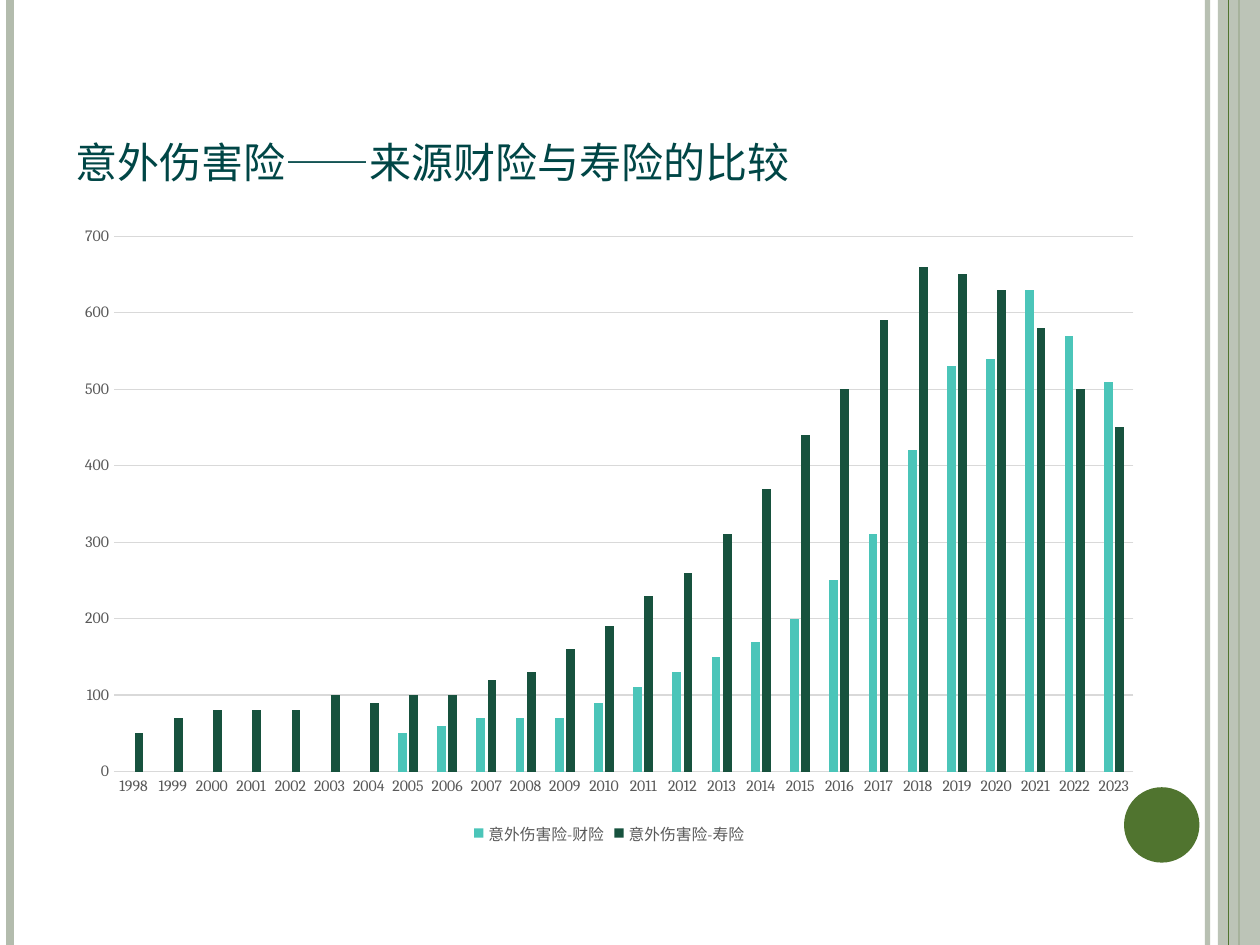
import pptx
import pptx.chart.data
import pptx.dml.color
import pptx.enum.chart
import pptx.enum.shapes
import pptx.enum.text
import pptx.oxml.ns
import pptx.util
from lxml import etree
from pptx.util import Cm, Pt

FONT = "Cambria"
SAGE, MOSS, GRID, LABEL = "B3BCAD", "50742F", "D9D9D9", "595959"
PAGE_WIDTH, PAGE_HEIGHT = Cm(25.4), Cm(19.05)

YEARS = [str(year) for year in range(1998, 2024)]
PROPERTY_INSURERS = [None] * 7 + [50, 60, 70, 70, 70, 90, 110, 130, 150, 170,
                                  200, 250, 310, 420, 530, 540, 630, 570, 510]
LIFE_INSURERS = [50, 70, 80, 80, 80, 100, 90, 100, 100, 120, 130, 160, 190,
                 230, 260, 310, 370, 440, 500, 590, 660, 650, 630, 580, 500, 450]
SERIES = [("意外伤害险-财险", PROPERTY_INSURERS, "4BC5B9"),
          ("意外伤害险-寿险", LIFE_INSURERS, "17523E")]


def color(hex_code):
    return pptx.dml.color.RGBColor.from_string(hex_code)


def add_child(parent, tag, **attributes):
    return etree.SubElement(parent, pptx.oxml.ns.qn(tag), attributes)


def set_opacity(properties, percent):
    for solid in properties.iter(pptx.oxml.ns.qn("a:srgbClr")):
        add_child(solid, "a:alpha", val=str(percent * 1000))


def set_font(font, size, hex_code):
    font.name = FONT
    font.size = Pt(size)
    font.color.rgb = color(hex_code)


def add_text(slide, text, left, top, width, height, size, hex_code,
             anchor=pptx.enum.text.MSO_ANCHOR.BOTTOM, small_caps=False):
    frame = slide.shapes.add_textbox(left, top, width, height).text_frame
    frame.word_wrap = True
    frame.vertical_anchor = anchor
    run = frame.paragraphs[0].add_run()
    run.text = text
    set_font(run.font, size, hex_code)
    if small_caps:
        run.font._element.set("cap", "small")


def add_stripe(slide, x, top, height, hex_code, weight, opacity=100):
    stripe = slide.shapes.add_connector(
        pptx.enum.shapes.MSO_CONNECTOR.STRAIGHT, x, top, x, top + height)
    stripe.line.color.rgb = color(hex_code)
    stripe.line.width = Pt(weight)
    properties = stripe._element.spPr
    if opacity < 100:
        set_opacity(properties, opacity)
    add_child(properties, "a:effectLst")


def add_filled(slide, kind, left, top, width, height, hex_code, opacity=100):
    shape = slide.shapes.add_shape(kind, left, top, width, height)
    shape.shadow.inherit = False
    shape.fill.solid()
    shape.fill.fore_color.rgb = color(hex_code)
    if opacity < 100:
        set_opacity(shape._element.spPr, opacity)
    shape.line.fill.background()


def add_frame(slide, left, top, width, height):
    """Stripes along both edges of the page, with the round badge."""
    right = left + width
    shapes = pptx.enum.shapes.MSO_SHAPE
    add_stripe(slide, right - Cm(1.06), top, height, SAGE, 3, opacity=93)
    add_stripe(slide, left + Cm(0.21), top, height, SAGE, 4.5)
    add_stripe(slide, right - Cm(0.42), top, height, MOSS, 1.5)
    add_filled(slide, shapes.RECTANGLE, right - Cm(0.85), top,
               Cm(0.85), height, SAGE, opacity=87)
    add_stripe(slide, right - Cm(0.64), top, height, MOSS, 0.75)
    add_filled(slide, shapes.OVAL, right - Cm(2.74), top + height - Cm(3.18),
               Cm(1.52), Cm(1.52), MOSS)


def style_axis(axis):
    axis.major_tick_mark = pptx.enum.chart.XL_TICK_MARK.NONE
    axis.minor_tick_mark = pptx.enum.chart.XL_TICK_MARK.NONE
    set_font(axis.tick_labels.font, 9, LABEL)


def style_line(line):
    line.color.rgb = color(GRID)
    line.width = Pt(0.75)


def add_comparison_chart(slide, left, top, width, height):
    chart_data = pptx.chart.data.CategoryChartData()
    chart_data.categories = YEARS
    for name, values, _ in SERIES:
        chart_data.add_series(name, values)
    chart = slide.shapes.add_chart(
        pptx.enum.chart.XL_CHART_TYPE.COLUMN_CLUSTERED,
        left, top, width, height, chart_data).chart
    chart.has_title = False
    set_font(chart.font, 10, "000000")

    # Columns
    plot = chart.plots[0]
    plot.vary_by_categories = False
    plot.gap_width = 219
    plot.overlap = -27
    for columns, (_, _, hex_code) in zip(plot.series, SERIES):
        columns.format.fill.solid()
        columns.format.fill.fore_color.rgb = color(hex_code)
        columns.invert_if_negative = False

    # Axes
    years, amounts = chart.category_axis, chart.value_axis
    style_axis(years)
    style_line(years.format.line)
    style_axis(amounts)
    amounts.minimum_scale, amounts.maximum_scale, amounts.major_unit = 0, 700, 100
    amounts.format.line.fill.background()
    amounts.has_major_gridlines = True
    style_line(amounts.major_gridlines.format.line)

    # Legend
    chart.has_legend = True
    chart.legend.position = pptx.enum.chart.XL_LEGEND_POSITION.BOTTOM
    chart.legend.include_in_layout = False
    set_font(chart.legend.font, 9, LABEL)


def main():
    deck = pptx.Presentation()
    deck.slide_width, deck.slide_height = PAGE_WIDTH, PAGE_HEIGHT
    slide = deck.slides.add_slide(deck.slide_layouts[6])
    add_frame(slide, 0, 0, PAGE_WIDTH, PAGE_HEIGHT)
    add_text(slide, "意外伤害险——来源财险与寿险的比较", Cm(1.27), Cm(0.76),
             Cm(20.75), Cm(3.18), size=30, hex_code="004646", small_caps=True)
    add_comparison_chart(slide, Cm(1.27), Cm(4.32), Cm(22.02), Cm(12.8))
    deck.save("out.pptx")


if __name__ == "__main__":
    main()
